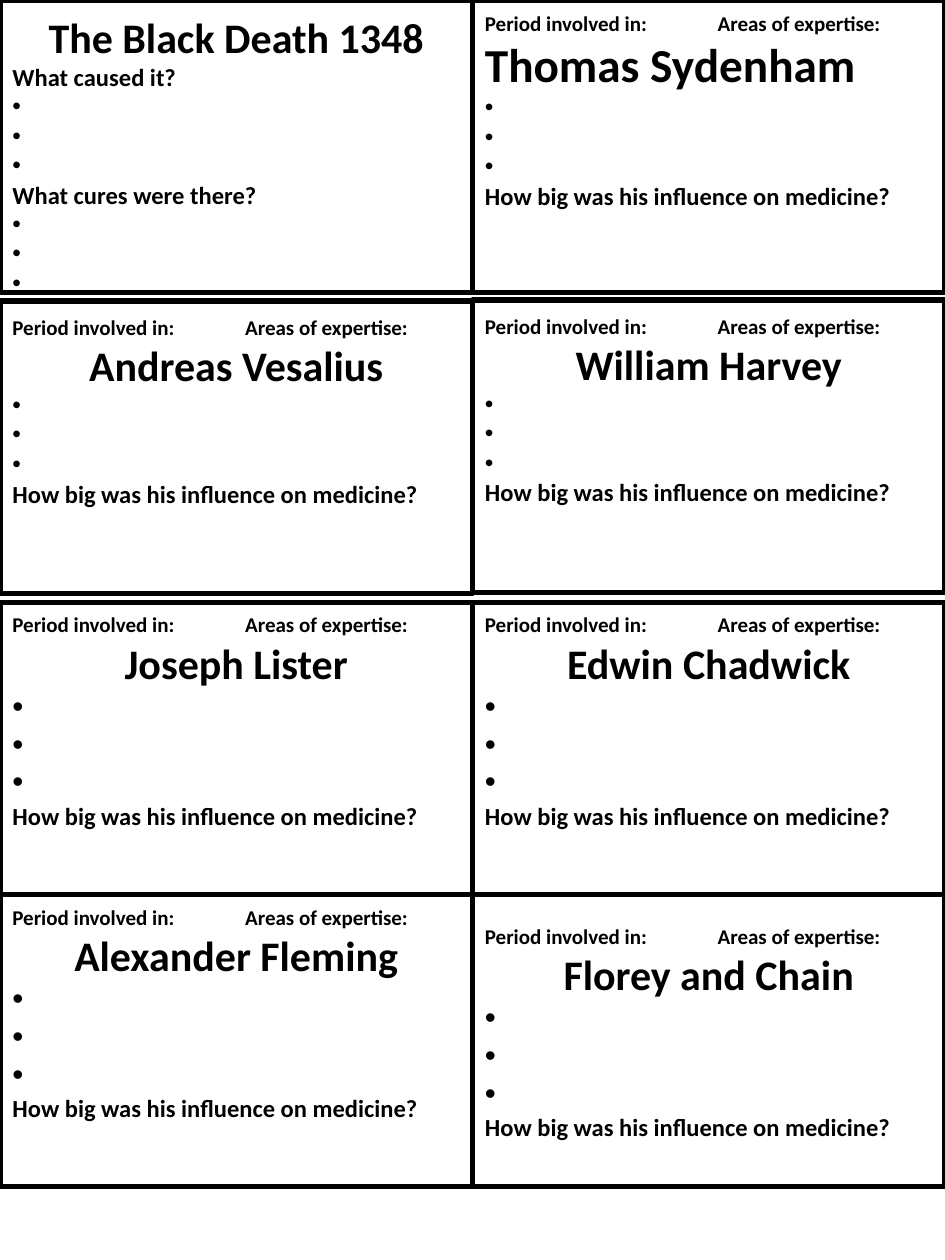
from lxml.etree import SubElement
from pptx import Presentation
from pptx.dml.color import RGBColor
from pptx.enum.shapes import MSO_SHAPE as Preset
from pptx.enum.text import MSO_ANCHOR as Anchor, PP_ALIGN as Align
from pptx.oxml.ns import qn
from pptx.util import Pt

BLACK = RGBColor(0, 0, 0)
WHITE = RGBColor(255, 255, 255)
FONT = "Calibri"
CARD_WIDTH, CARD_HEIGHT = 270, 167
SIDE_INSET = 7.2
AREAS_TAB = 133
BULLET_INDENT = 14
INFLUENCE = "How big was his influence on medicine?"

# name, column, top, text inset, name size, bullet size, name alignment
PEOPLE = [
    ("Thomas Sydenham", 1, 0, 6, 27, 14, Align.LEFT),
    ("Andreas Vesalius", 0, 172, 7.8, 24, 14, Align.CENTER),
    ("William Harvey", 1, 171.4, 7.8, 24, 14, Align.CENTER),
    ("Joseph Lister", 0, 344.2, 5.4, 24, 18, Align.CENTER),
    ("Edwin Chadwick", 1, 344.2, 5.4, 24, 18, Align.CENTER),
    ("Alexander Fleming", 0, 511.2, 5.4, 24, 18, Align.CENTER),
    ("Florey and Chain", 1, 511.2, 16.4, 24, 18, Align.CENTER),
]


def add_card(slide, column, top, text_inset):
    """Add a bordered card and return its text frame."""
    shape = slide.shapes.add_shape(Preset.RECTANGLE, Pt(column * CARD_WIDTH), Pt(top),
                                   Pt(CARD_WIDTH), Pt(CARD_HEIGHT))
    shape.shadow.inherit = False
    shape.fill.solid()
    shape.fill.fore_color.rgb = WHITE
    shape.line.color.rgb = BLACK
    shape.line.width = Pt(3)
    frame = shape.text_frame
    frame.word_wrap = True
    frame.vertical_anchor = Anchor.TOP
    frame.margin_left = frame.margin_right = Pt(SIDE_INSET)
    frame.margin_top, frame.margin_bottom = Pt(text_inset), 0
    return frame


def add_line(frame, text, size, align=Align.LEFT):
    """Write the next paragraph, starting with the empty first one."""
    first = frame.paragraphs[0]
    paragraph = frame.add_paragraph() if first.runs else first
    paragraph.add_run().text = text
    paragraph.alignment = align
    font = paragraph.font
    font.name, font.size, font.bold = FONT, Pt(size), True
    font.color.rgb = BLACK
    return paragraph


def add_bullets(frame, size, count=3):
    """Add bullets left open for the pupil's notes."""
    for _ in range(count):
        properties = add_line(frame, " ", size)._p.get_or_add_pPr()
        properties.set("marL", str(Pt(BULLET_INDENT)))
        properties.set("indent", str(-Pt(BULLET_INDENT)))
        bullet_font = SubElement(properties, qn("a:buFont"), typeface="Arial")
        bullet = SubElement(properties, qn("a:buChar"), char="•")
        properties.insert(0, bullet_font)
        properties.insert(1, bullet)


def add_heading(frame):
    """Add the two labels, the second one at a tab stop."""
    paragraph = add_line(frame, "Period involved in:\tAreas of expertise:", 12)
    properties = paragraph._p.get_or_add_pPr()
    tabs = SubElement(properties, qn("a:tabLst"))
    SubElement(tabs, qn("a:tab"), pos=str(Pt(AREAS_TAB)), algn="l")
    properties.insert(0, tabs)


def add_person(slide, name, column, top, text_inset, name_size, bullet_size, align):
    frame = add_card(slide, column, top, text_inset)
    add_heading(frame)
    add_line(frame, name, name_size, align)
    add_bullets(frame, bullet_size)
    add_line(frame, INFLUENCE, 14)


def add_black_death(slide):
    frame = add_card(slide, 0, 0, 6.6)
    add_line(frame, "The Black Death 1348", 24, Align.CENTER)
    for question in ("What caused it?", "What cures were there?"):
        add_line(frame, question, 14)
        add_bullets(frame, 14)


def main():
    presentation = Presentation()
    presentation.slide_width, presentation.slide_height = Pt(540), Pt(720)
    slide = presentation.slides.add_slide(presentation.slide_layouts[6])

    # Event card, then one card for each person
    add_black_death(slide)
    for person in PEOPLE:
        add_person(slide, *person)

    presentation.save("out.pptx")


if __name__ == "__main__":
    main()
